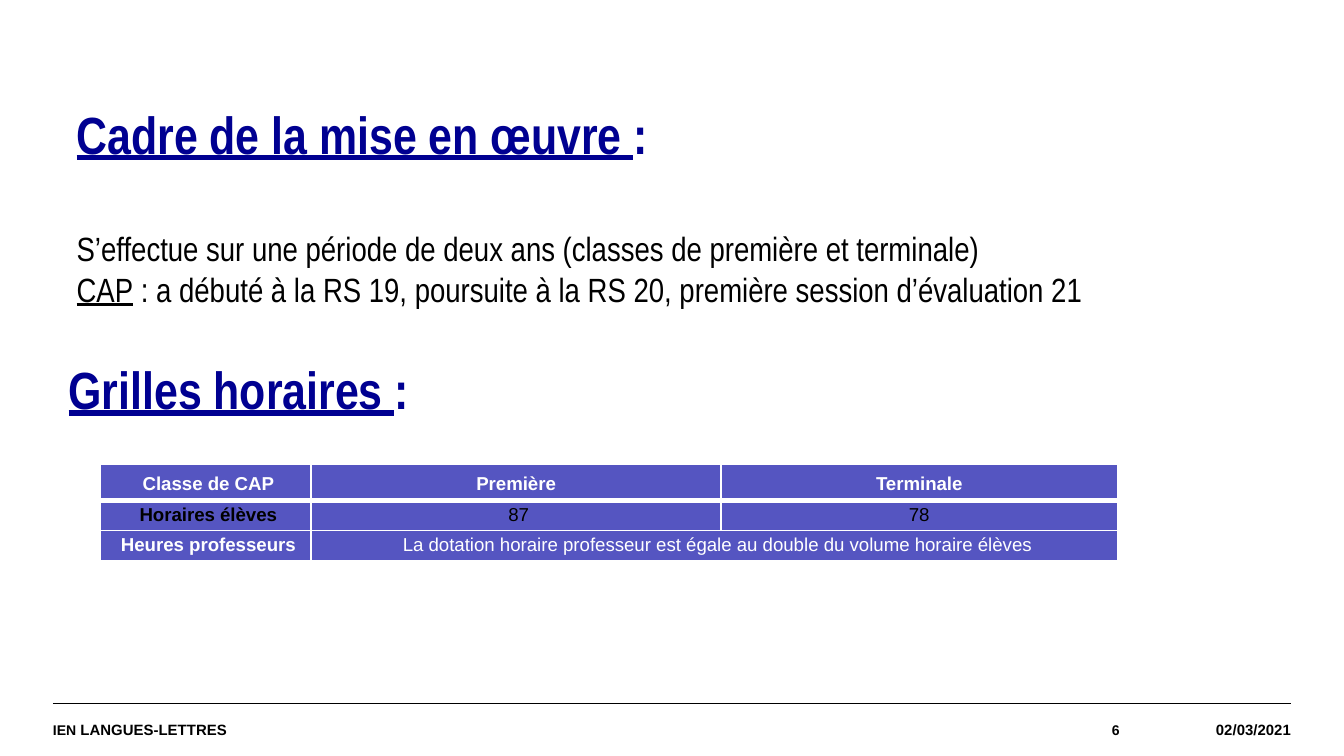
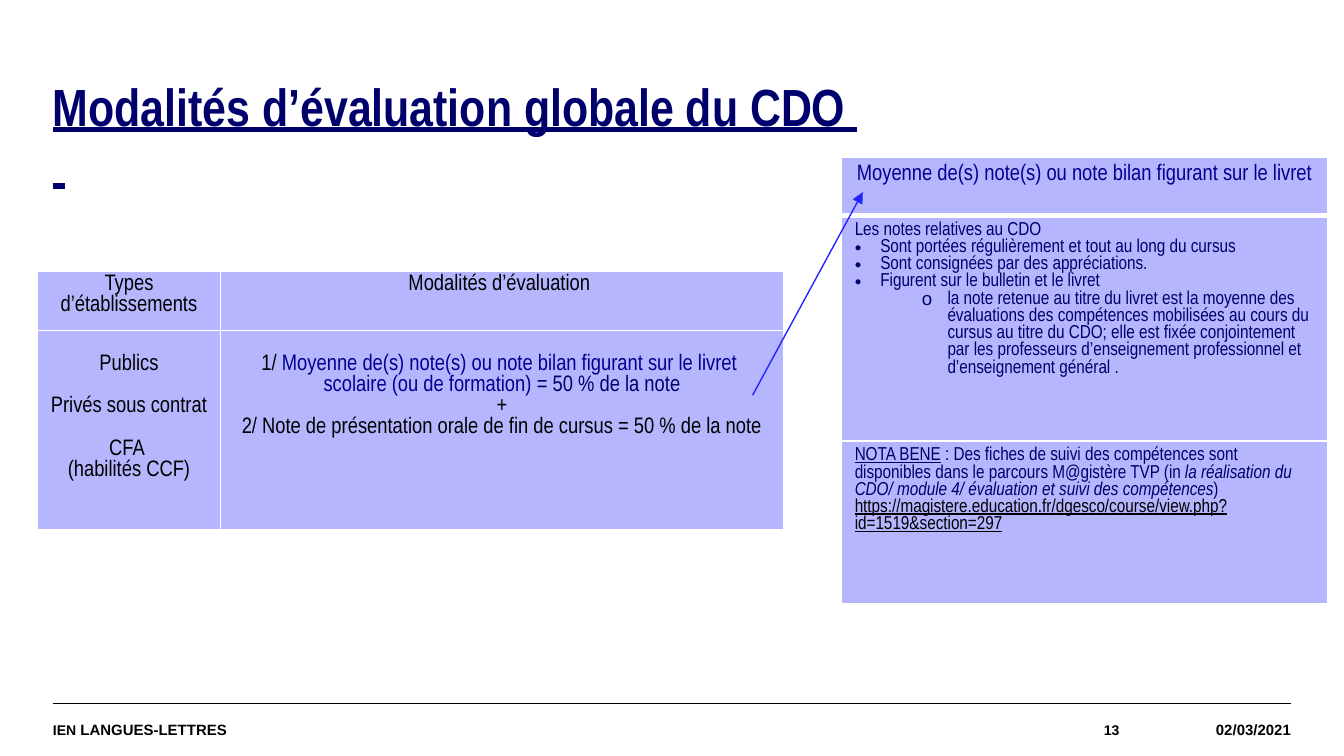
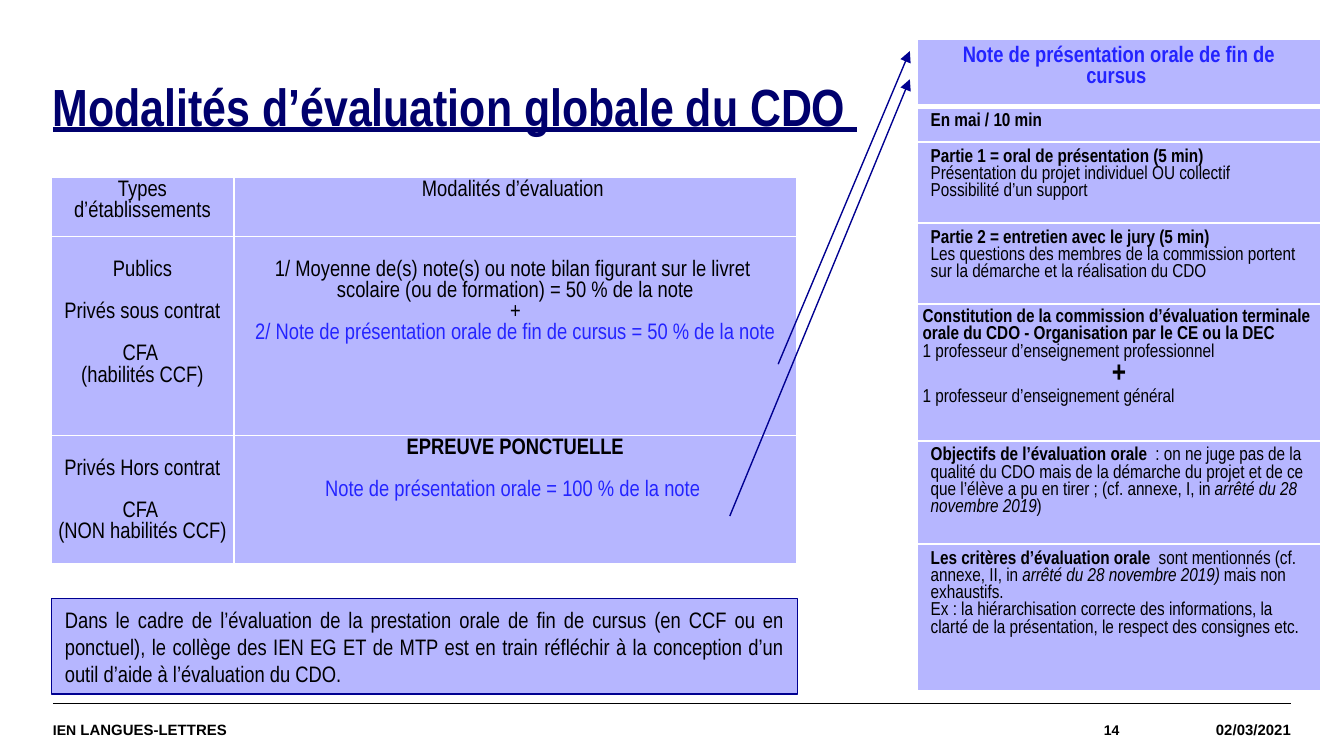
from copy import deepcopy
from dataclasses import dataclass

from lxml import etree
from pptx import Presentation
from pptx import util as u
from pptx.dml.color import RGBColor
from pptx.enum import shapes, text
from pptx.oxml.ns import qn

# The slide is a grid of 100 columns by 56.25 rows; one step is a tenth of an inch.
COLS, ROWS = 100, 56.25
LEFT, RIGHT, BASE = 3.94, 96.06, 52.33
NAVY, BLUE, VIVID = "00006D", "000091", "2424FF"
BLACK, WHITE, LILAC, VIOLET = "000000", "FFFFFF", "B6B6FF", "5555C1"
NARROW = "Arial Narrow"
ALIGN = {"l": text.PP_ALIGN.LEFT, "c": text.PP_ALIGN.CENTER,
         "r": text.PP_ALIGN.RIGHT, "j": text.PP_ALIGN.JUSTIFY}
SKIP = 11.3       # one table line of 12 points
HEAD = {"size": 28, "font": NARROW, "color": BLUE, "bold": True}
LINK = {"under": True}


@dataclass
class Para:
    """Runs are strings, or pairs of a string and the style that differs."""
    runs: list
    align: str = "l"
    gap: float = 0
    mark: str = ""
    inset: float = 0


def step(n):
    return u.Inches(n / 10)


def paint(hue):
    return RGBColor.from_string(hue)


def style(font, size, color, font_name, bold=False, under=False, italic=False):
    font.size, font.name = u.Pt(size), font_name
    font.bold, font.underline, font.italic = bold, under, italic
    font.color.rgb = paint(color)


def add_run(par, words, look):
    """Add a run; each newline becomes a break of the same style."""
    for i, part in enumerate(words.split("\n")):
        if i:
            par.add_line_break()
            par._p[-1].append(deepcopy(run._r.rPr))
        run = par.add_run()
        run.text = part
        style(run.font, look["size"], look["color"], look["font"],
              *(look.get(k, False) for k in ("bold", "under", "italic")))


def set_mark(par, mark, inset):
    """Set the bullet, or none, and its hanging indent."""
    props = par._p.get_or_add_pPr()
    hang = u.Inches(0.19) if mark else 0
    props.set("marL", str(u.Inches(inset)))
    props.set("indent", str(-hang))
    if mark:
        etree.SubElement(props, qn("a:buFont")).set("typeface", "Arial")
        etree.SubElement(props, qn("a:buChar")).set("char", mark)
    else:
        etree.SubElement(props, qn("a:buNone"))


def write(frame, paras, look, lead=1.0):
    for i, item in enumerate(paras):
        par = frame.paragraphs[0] if i == 0 else frame.add_paragraph()
        set_mark(par, item.mark, item.inset)
        par.alignment = ALIGN[item.align]
        par.line_spacing = lead
        par.space_before, par.space_after = u.Pt(item.gap), u.Pt(0)
        for run in item.runs:
            words, diff = (run, {}) if isinstance(run, str) else run
            add_run(par, words, {**look, **diff})


def pad(area, left, top, right, bottom):
    area.margin_left, area.margin_top = u.Inches(left), u.Inches(top)
    area.margin_right, area.margin_bottom = u.Inches(right), u.Inches(bottom)


def fill_holder(holder, box, paras, look, lead=1.0):
    holder.left, holder.top, holder.width, holder.height = map(step, box)
    frame = holder.text_frame
    frame.auto_size, frame.word_wrap = text.MSO_AUTO_SIZE.NONE, True
    frame.vertical_anchor = text.MSO_ANCHOR.TOP
    pad(frame, 0, 0, 0, 0)
    write(frame, paras, look, lead)


def add_line(slide, start, end, hue, width, arrow=False):
    line = slide.shapes.add_connector(
        shapes.MSO_CONNECTOR.STRAIGHT, *map(step, (*start, *end)))
    line.line.color.rgb, line.line.width = paint(hue), u.Pt(width)
    props = line._element.spPr
    if arrow:
        etree.SubElement(props.find(qn("a:ln")), qn("a:tailEnd")).set("type", "triangle")
    etree.SubElement(props, qn("a:effectLst"))


def add_footer(slide, number):
    add_line(slide, (LEFT, BASE), (RIGHT, BASE), BLACK, 0.8)
    bold = {"size": 8, "font": "Arial", "color": BLACK, "bold": True}
    small = {"size": 7.5}
    parts = [(64.6, "l", [("IEN ", small), "LANGUES-LETTRES"]),
             (14.76, "r", [(number, small)]),
             (12.76, "r", ["02/03/2021"])]
    x = LEFT
    for wide, align, runs in parts:
        area = slide.shapes.add_textbox(*map(step, (x, BASE, wide, ROWS - BASE)))
        frame = area.text_frame
        frame.word_wrap, frame.vertical_anchor = True, text.MSO_ANCHOR.MIDDLE
        pad(frame, 0, 0, 0, 0)
        write(frame, [Para(runs, align)], bold)
        x += wide


def edge(cell, top, bottom):
    props = cell._tc.get_or_add_tcPr()
    for side, width in zip("LRTB", (1, 1, top, bottom)):
        line = etree.SubElement(props, qn("a:ln" + side), w=str(u.Pt(width)))
        solid = etree.SubElement(line, qn("a:solidFill"))
        etree.SubElement(solid, qn("a:srgbClr")).set("val", WHITE)


def add_grid(slide, at, wides, highs, hue, thick):
    """Add an empty table; thick widens the line below its first row."""
    size = sum(wides), sum(highs)
    table = slide.shapes.add_table(
        len(highs), len(wides), *map(step, (*at, *size))).table
    table.first_row = table.horz_banding = False
    for col, wide in zip(table.columns, wides):
        col.width = step(wide)
    for row, high in zip(table.rows, highs):
        row.height = step(high)
    for r in range(len(highs)):
        for c in range(len(wides)):
            cell = table.cell(r, c)
            edge(cell, 3 if thick and r == 1 else 1, 3 if thick and r == 0 else 1)
            cell.fill.solid()
            cell.fill.fore_color.rgb = paint(hue)
    return table


def add_hours(slide, at):
    table = add_grid(slide, at, (15.7, 30.5, 29.5), (2.5, 2.2, 2.2), VIOLET, True)
    table.cell(2, 1).merge(table.cell(2, 2))
    rows = [(("Classe de CAP", "Première ", "Terminale"), WHITE),
            (("Horaires élèves", "87", "78"), BLACK),
            (("Heures professeurs", "La dotation horaire professeur est égale "
              "au double du volume horaire élèves"), WHITE)]
    for r, (row, hue) in enumerate(rows):
        for c, words in enumerate(row):
            cell = table.cell(r, c)
            pad(cell, 0.04, 0 if r else 0.04, 0.04 if c == 2 else 0, 0.04)
            look = {"size": 10, "font": "Arial", "color": hue, "bold": r == 0 or c == 0}
            write(cell.text_frame, [Para([words], "c")], look, 1.2)


def add_modes(slide, at, hues, single=False):
    """Table of schools and marks; hues colour the livret, its share and the oral."""
    livret, share, oral = ({"color": hue} for hue in hues)

    def mid(*runs, gap=0):
        return Para(list(runs), "c", gap)

    rows = [
        [(0, [mid("Types"), mid("d’établissements")]),
         (0, [mid("Modalités d’évaluation ")])],
        [(1, [mid("Publics"), mid("Privés sous contrat", gap=SKIP),
              mid("CFA ", gap=SKIP), mid("(habilités CCF)")]),
         (1, [mid("1/ ", ("Moyenne de(s) note(s) ou note bilan figurant sur le livret ", livret)),
              mid(("scolaire (ou de formation) ", livret), ("= 50 % de la note", share)),
              mid("+"),
              mid(("2/ Note de présentation orale de fin de cursus = 50 % de la note", oral))])]]
    if single:
        rows.append(
            [(1, [mid("Privés Hors contrat"), mid("CFA ", gap=SKIP),
                  mid("(NON habilités CCF)")]),
             (0, [mid(("EPREUVE PONCTUELLE", {"bold": True})),
                  mid(("Note de présentation orale = 100 % de la note ", oral), gap=SKIP)])])
    table = add_grid(slide, at, (13.6, 41.9), (4, 14.8, 8.3)[:len(rows)], LILAC, False)
    look = {"size": 12, "font": NARROW, "color": BLACK}
    for r, row in enumerate(rows):
        for c, (skip, paras) in enumerate(row):
            cell = table.cell(r, c)
            pad(cell, 0.02, 0.02 + skip * SKIP / 72, 0.02, 0.02)
            write(cell.text_frame, paras, look)


def add_panel(slide, at, wide, highs, head, blocks, hue):
    """One-column table: a heading, then blocks of small text."""
    table = add_grid(slide, at, (wide,), highs, LILAC, True)
    write(table.cell(0, 0).text_frame, [Para([head], "c")],
          {"size": 12, "font": NARROW, "color": hue})
    look = {"size": 10, "font": NARROW, "color": hue if hue == NAVY else BLACK}
    for r, paras in enumerate(blocks, 1):
        write(table.cell(r, 0).text_frame, paras, look)
    return table


def add_note(slide, box, words):
    note = slide.shapes.add_shape(shapes.MSO_SHAPE.RECTANGLE, *map(step, box))
    note.shadow.inherit = False
    note.fill.solid()
    note.fill.fore_color.rgb = paint(LILAC)
    note.line.color.rgb, note.line.width = paint(BLUE), u.Pt(0.75)
    note.text_frame.word_wrap = True
    write(note.text_frame, [Para([words], "j")],
          {"size": 12, "font": NARROW, "color": BLACK})


def hours_slide(prs):
    slide = prs.slides.add_slide(prs.slide_layouts[1])
    fill_holder(slide.shapes.title, (5.1, 26.6, 92.1, 5.7),
                [Para([("Grilles horaires ", LINK), ": "])], HEAD)
    plain = {"size": 18, "color": BLACK, "bold": False}
    fill_holder(slide.placeholders[1], (5.7, 7.6, 92.1, 16), [
        Para([("Cadre de la mise en œuvre ", LINK), ": "]),
        Para([("S’effectue sur une période de deux ans "
               "(classes de première et terminale)", plain)], gap=34),
        Para([("CAP", {**plain, **LINK}),
              (" : a débuté à la RS 19, poursuite à la RS 20, "
               "première session d’évaluation 21", plain)])], HEAD)
    add_hours(slide, (7.45, 34.55))
    add_footer(slide, "6")


def modes_slide(prs, number, tail=""):
    slide = prs.slides.add_slide(prs.slide_layouts[5])
    words = "Modalités d’évaluation globale du CDO " + tail
    fill_holder(slide.shapes.title, (LEFT, 6.04, RIGHT - LEFT, 5.7),
                [Para([words])], {**HEAD, **LINK, "color": NAVY}, 0.9)
    add_footer(slide, number)
    return slide


def livret_slide(prs):
    slide = modes_slide(prs, "13", "\n ")
    add_modes(slide, (2.8, 20.2), (BLUE, NAVY, BLACK))
    slant = {"italic": True}
    dots = ["Sont portées régulièrement et tout au long du cursus",
            "Sont consignées par des appréciations.",
            "Figurent sur le bulletin et le livret"]
    detail = ("la note retenue au titre du livret est la moyenne des évaluations des "
              "compétences mobilisées au cours du cursus au titre du CDO; elle est fixée "
              "conjointement par les professeurs d’enseignement professionnel et "
              "d’enseignement général .")
    notes = [Para(["Les notes relatives au CDO"]),
             *(Para([dot], mark="•", inset=0.19) for dot in dots),
             Para([detail], mark="o", inset=0.69)]
    source = [
        Para([("NOTA BENE", LINK),
              " : Des fiches de suivi des compétences sont disponibles dans le parcours "
              "M@gistère TVP (in ",
              ("la réalisation du CDO/ module 4/ évaluation et suivi des compétences", slant),
              ") "]),
        Para([("https://magistere.education.fr/dgesco/course/view.php?id=1519&section=297",
               {**LINK, "color": BLACK})])]
    head = ("Moyenne de(s) note(s) ou note bilan figurant sur le livret", {"color": BLUE})
    add_panel(slide, (62.6, 11.7), 36.2, (4.3, 16.8, 12.1), head, [notes, source], NAVY)
    add_line(slide, (56, 29.4), (64.2, 14.3), VIVID, 0.75, True)


def oral_slide(prs):
    slide = modes_slide(prs, "14")
    add_modes(slide, (3.8, 13.2), (BLACK, BLACK, VIVID), True)
    bold, slant = {"bold": True}, {"italic": True}
    blocks = [
        [Para([("En mai / 10 min", bold)])],
        [Para([("Partie 1 = oral de présentation (5 min)", bold)]),
         Para(["Présentation du projet individuel OU collectif"]),
         Para(["Possibilité d’un support"])],
        [Para([("Partie 2 = entretien avec le jury (5 min)", bold)]),
         Para(["Les questions des membres de la commission portent sur la démarche "
               "et la réalisation du CDO"])],
        [Para([("Constitution de la commission d’évaluation terminale orale du CDO - "
                "Organisation par le CE ou la DEC", bold)]),
         Para(["1 professeur d’enseignement professionnel"]),
         Para([("+", {"size": 16, **bold})], "c"),
         Para(["1 professeur d’enseignement général"])],
        [Para([("Objectifs de l’évaluation orale", bold),
               "  : on ne juge pas de la qualité du CDO mais de la démarche du projet et de "
               "ce que l’élève a pu en tirer ; (cf. annexe, I, in ",
               ("arrêté du 28 novembre 2019", slant), ")"])],
        [Para([("Les critères d’évaluation orale ", bold),
               " sont mentionnés (cf. annexe, II, in ",
               ("arrêté du 28 novembre 2019) ", slant), "mais non exhaustifs."]),
         Para(["Ex : la hiérarchisation correcte des informations, la clarté de la "
               "présentation, le respect des consignes etc."])]]
    head = ("Note de présentation orale de fin de cursus ", bold)
    panel = add_panel(slide, (68.25, 2.9), 30, (4.1, 2.5, 5.8, 5.7, 10.2, 7.3, 10.9),
                      head, blocks, VIVID)
    pad(panel.cell(4, 0), 0.04, 0.04, 0.04, 0.04)
    for start, end in (((57.9, 27.1), (67.7, 3.8)), ((54.3, 38.4), (67.7, 5.9))):
        add_line(slide, start, end, BLUE, 0.75, True)
    add_note(slide, (3.84, 44.55, 55.5, 7.1),
             "Dans le cadre de l’évaluation de la prestation orale de fin de cursus (en CCF "
             "ou en ponctuel), le collège des IEN EG ET de MTP est en train réfléchir à la "
             "conception d’un outil d’aide à l’évaluation du CDO.")


def main():
    prs = Presentation()
    prs.slide_width, prs.slide_height = step(COLS), step(ROWS)
    hours_slide(prs)
    livret_slide(prs)
    oral_slide(prs)
    prs.save("out.pptx")


if __name__ == "__main__":
    main()
